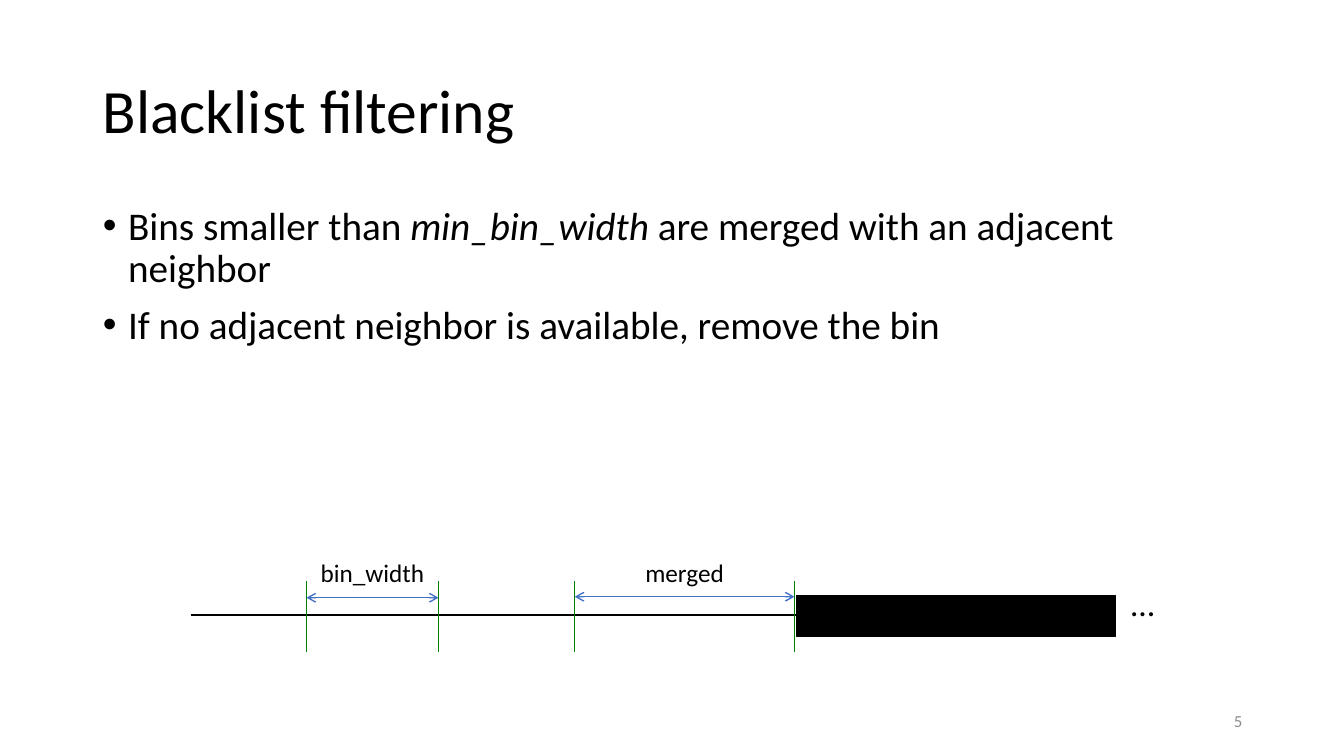
"""Build the slide on blacklist filtering of genomic bins."""
from dataclasses import dataclass

from pptx import Presentation
from pptx import util as u
from pptx.dml.color import RGBColor
from pptx.enum import shapes, text
from pptx.oxml.xmlchemy import OxmlElement


@dataclass(frozen=True)
class Theme:
    """Colours and type sizes of the slide."""
    font: str = "Calibri"
    ink: str = "000000"
    grey: str = "8C8C8C"
    edge: str = "008000"
    span: str = "4472C4"
    title: int = 44
    body: int = 28
    ellipsis: int = 24
    label: int = 18
    number: int = 12


def add_child(parent, tag, **attributes):
    """Append an XML element with the given attributes."""
    child = OxmlElement(tag)
    for name, value in attributes.items():
        child.set(name, value)
    parent.append(child)
    return child


class SlideBuilder:
    """Draws styled elements on one slide."""

    def __init__(self, page, theme):
        """Keep the page and its theme."""
        self.page = page
        self.theme = theme

    def place(self, shape, left, top, width, height):
        """Move and size a shape, in inches."""
        shape.left, shape.top = u.Inches(left), u.Inches(top)
        shape.width, shape.height = u.Inches(width), u.Inches(height)

    def style(self, para, size, color=None):
        """Set the font of a paragraph."""
        para.font.name = self.theme.font
        para.font.size = u.Pt(size)
        para.font.color.rgb = RGBColor.from_string(color or self.theme.ink)

    def title(self, words, *place):
        """Fill the title placeholder."""
        shape = self.page.shapes.title
        self.place(shape, *place)
        frame = shape.text_frame
        frame.text = words
        frame.vertical_anchor = text.MSO_ANCHOR.MIDDLE
        para = frame.paragraphs[0]
        para.alignment = text.PP_ALIGN.LEFT
        para.line_spacing = 0.9
        self.style(para, self.theme.title)

    def bullets(self, items, *place):
        """Fill the body placeholder; each item lists (words, italic) spans."""
        shape = self.page.placeholders[1]
        self.place(shape, *place)
        frame = shape.text_frame
        for index, spans in enumerate(items):
            para = frame.add_paragraph() if index else frame.paragraphs[0]
            para.line_spacing = 0.9
            para.space_before = u.Pt(10)
            self.style(para, self.theme.body)
            properties = para._p.get_or_add_pPr()
            properties.set("marL", str(u.Inches(0.25)))
            properties.set("indent", str(-u.Inches(0.25)))
            for words, italic in spans:
                span = para.add_run()
                span.text = words
                if italic:
                    span.font.italic = True

    def label(self, words, size, *place, color=None, align=None, anchor=None, wrap=False):
        """Add a text box of one line."""
        box = self.page.shapes.add_textbox(*map(u.Inches, place))
        frame = box.text_frame
        frame.word_wrap = wrap
        frame.vertical_anchor = anchor
        para = frame.paragraphs[0]
        para.text = words
        para.alignment = align
        self.style(para, size, color)

    def line(self, start, end, color, arrows=False):
        """Add a straight line, with arrowheads at both ends on request."""
        line = self.page.shapes.add_connector(
            shapes.MSO_CONNECTOR.STRAIGHT, *map(u.Inches, (*start, *end)))
        line.line.color.rgb = RGBColor.from_string(color)
        line.line.width = u.Pt(1)
        if arrows:
            outline = line.line._get_or_add_ln()
            for tag in ("a:headEnd", "a:tailEnd"):
                add_child(outline, tag, type="arrow")
        add_child(line._element.spPr, "a:effectLst")

    def block(self, color, *place):
        """Add a solid rectangle."""
        shape = self.page.shapes.add_shape(
            shapes.MSO_SHAPE.RECTANGLE, *map(u.Inches, place))
        shape.shadow.inherit = False
        shape.fill.solid()
        shape.fill.fore_color.rgb = RGBColor.from_string(color)
        shape.line.color.rgb = RGBColor.from_string(color)
        shape.line.width = u.Pt(0.5)


def main():
    """Build and save the deck."""
    deck = Presentation()
    deck.slide_width, deck.slide_height = u.Inches(13.33), u.Inches(7.5)
    theme = Theme()
    slide = SlideBuilder(deck.slides.add_slide(deck.slide_layouts[1]), theme)

    slide.title("Blacklist filtering", 0.92, 0.4, 11.5, 1.45)
    slide.bullets([
        [("Bins smaller than ", False), ("min_bin_width", True),
         (" are merged with an adjacent neighbor", False)],
        [("If no adjacent neighbor is available, remove the bin", False)],
    ], 0.92, 2, 11.5, 4.76)
    slide.label("5", theme.number, 9.42, 6.95, 3, 0.4, color=theme.grey,
                align=text.PP_ALIGN.RIGHT, anchor=text.MSO_ANCHOR.MIDDLE, wrap=True)

    bin_edges = [3.04, 4.35, 5.7, 7.88]
    slide.line((1.89, 6.1), (11.06, 6.1), theme.ink)
    slide.block(theme.ink, 7.9, 5.91, 3.16, 0.4)
    for edge in bin_edges:
        slide.line((edge, 5.76), (edge, 6.47), theme.edge)

    first, second, third, last = bin_edges
    for words, left, right, width, height in (
            ("bin_width", first, second, 1.24, 5.93),
            ("merged", third, last, 0.99, 5.92)):
        slide.line((left, height), (right, height), theme.span, arrows=True)
        slide.label(words, theme.label, (left + right - width) / 2, 5.48, width, 0.4,
                    align=text.PP_ALIGN.CENTER)
    slide.label("…", theme.ellipsis, 11.12, 5.73, 0.43, 0.5)

    deck.save("out.pptx")


if __name__ == "__main__":
    main()
